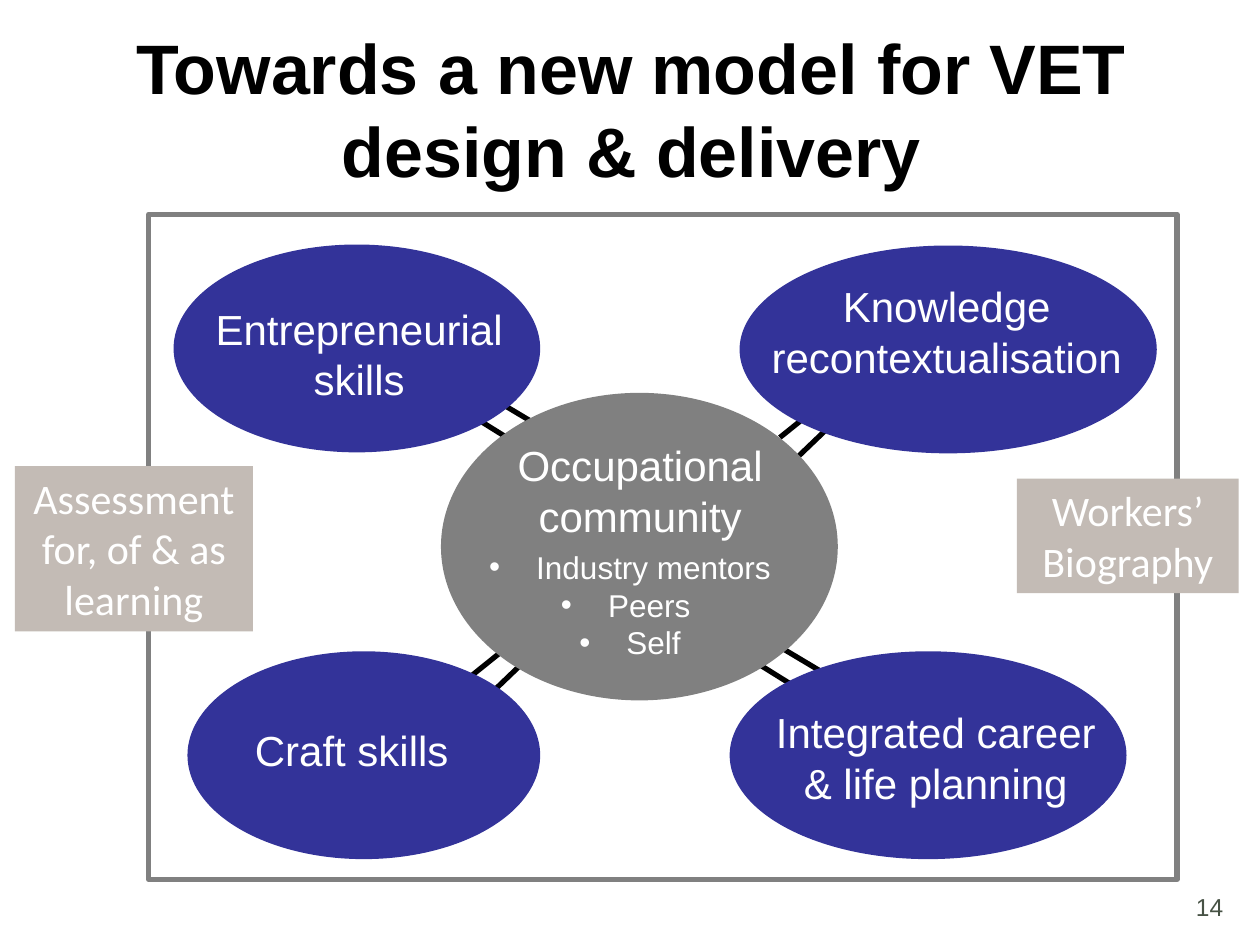
from dataclasses import dataclass

from lxml.etree import SubElement
from pptx import Presentation
from pptx.dml.color import RGBColor
from pptx.enum.shapes import MSO_CONNECTOR as Connector, MSO_SHAPE as Preset
from pptx.enum.text import MSO_ANCHOR as Anchor, PP_ALIGN as Align
from pptx.oxml.ns import qn
from pptx.util import Cm, Pt


@dataclass(frozen=True)
class Theme:
    black: str = "000000"
    white: str = "FFFFFF"
    blue: str = "333399"
    grey: str = "808080"
    stone: str = "C3BBB5"
    moss: str = "475245"
    title: int = 40
    label: int = 24
    item: int = 18
    number: int = 14
    stroke: int = 3
    font: str = "Arial"
    side_font: str = "Calibri"


THEME = Theme()

SKILLS = [
    ("Integrated career & life planning", (14.71, 13.13, 8, 4.19), (15.04, 14.12, 7.65, 2.31)),
    ("Knowledge recontextualisation", (14.91, 4.95, 8.41, 4.19), (15.29, 5.54, 7.59, 2.31)),
    ("Craft skills", (3.78, 13.13, 7.11, 4.19), (3.99, 14.48, 6.2, 1.27)),
    ("Entrepreneurial skills", (3.5, 4.93, 7.39, 4.19), (3.38, 5.99, 7.72, 2.31)),
]
SIDES = [
    ("Assessment for, of & as learning", (0.3, 9.4, 4.8, 3.33)),
    ("Workers’ Biography", (20.5, 9.65, 4.47, 2.31)),
]
RISING_PAIR = [(10.08, 13.16, 9.47, 13.65), (10.49, 13.41, 9.75, 14.12)]
FALLING_PAIR = [(9.35, 8.28, 10.49, 8.99), (9.93, 8.03, 11.07, 8.71)]
SPOKES = [
    (RISING_PAIR, (0, 0)),
    (RISING_PAIR, (6.25, -4.83)),
    (FALLING_PAIR, (0, 0)),
    (FALLING_PAIR, (5.69, 4.95)),
]


def lengths(values):
    return [Cm(value) for value in values]


def color(code):
    return RGBColor.from_string(code)


def write(shape, lines, size, ink=THEME.white, font=THEME.font,
          align=Align.CENTER, bold=False):
    frame = shape.text_frame
    frame.word_wrap = True
    frame.vertical_anchor = Anchor.TOP
    frame.text = "\n".join(lines)
    for para in frame.paragraphs:
        para.alignment = align
        for span in para.runs:
            span.font.name = font
            span.font.size = Pt(size)
            span.font.bold = bold
            span.font.color.rgb = color(ink)
    return frame


def add_label(page, lines, place, size, **style):
    box = page.shapes.add_textbox(*lengths(place))
    return write(box, lines, size, **style)


def add_figure(page, preset, place, fill=None, line=None):
    shape = page.shapes.add_shape(preset, *lengths(place))
    shape.shadow.inherit = False
    if fill:
        shape.fill.solid()
        shape.fill.fore_color.rgb = color(fill)
    else:
        shape.fill.background()
    if line:
        shape.line.color.rgb = color(line)
        shape.line.width = Pt(THEME.stroke)
    else:
        shape.line.fill.background()
    return shape


def add_spokes(page, pair, offset):
    dx, dy = offset
    for x1, y1, x2, y2 in pair:
        ends = lengths((x1 + dx, y1 + dy, x2 + dx, y2 + dy))
        spoke = page.shapes.add_connector(Connector.STRAIGHT, *ends)
        spoke.line.color.rgb = color(THEME.black)
        spoke.line.width = Pt(THEME.stroke)
        SubElement(spoke._element.spPr, qn("a:effectLst"))


def add_bullets(frame, indent):
    for para in frame.paragraphs:
        properties = para._p.get_or_add_pPr()
        properties.set("marL", str(indent))
        properties.set("indent", str(-indent))
        SubElement(properties, qn("a:buFont")).set("typeface", THEME.font)
        SubElement(properties, qn("a:buChar")).set("char", "•")


def main():
    deck = Presentation()
    deck.slide_width, deck.slide_height = Cm(25.4), Cm(19.05)
    page = deck.slides.add_slide(deck.slide_layouts[6])

    for pair, offset in SPOKES:
        add_spokes(page, pair, offset)
    add_figure(page, Preset.RECTANGLE, (3, 4.32, 20.73, 13.41), line=THEME.grey)
    add_label(page, ["14"], (19.63, 17.86, 5.28, 1.27), THEME.number,
              ink=THEME.moss, align=Align.RIGHT)
    add_label(page, ["Towards a new model for VET design & delivery"],
              (0.05, 0.36, 25.35, 3.68), THEME.title, ink=THEME.black, bold=True)

    add_figure(page, Preset.OVAL, (8.89, 7.92, 8, 6.2), fill=THEME.grey)
    add_label(page, ["Occupational community"], (10.11, 8.74, 5.59, 2.31), THEME.label)
    for name, oval, label in SKILLS:
        add_figure(page, Preset.OVAL, oval, fill=THEME.blue)
        add_label(page, [name], label, THEME.label)
    roles = add_label(page, ["Industry mentors", "Peers ", "Self"],
                      (9.5, 10.92, 6.4, 2.57), THEME.item)
    add_bullets(roles, Cm(0.95))

    for name, place in SIDES:
        panel = add_figure(page, Preset.RECTANGLE, place, fill=THEME.stone)
        write(panel, [name], THEME.label, font=THEME.side_font)

    deck.save("out.pptx")


if __name__ == "__main__":
    main()
